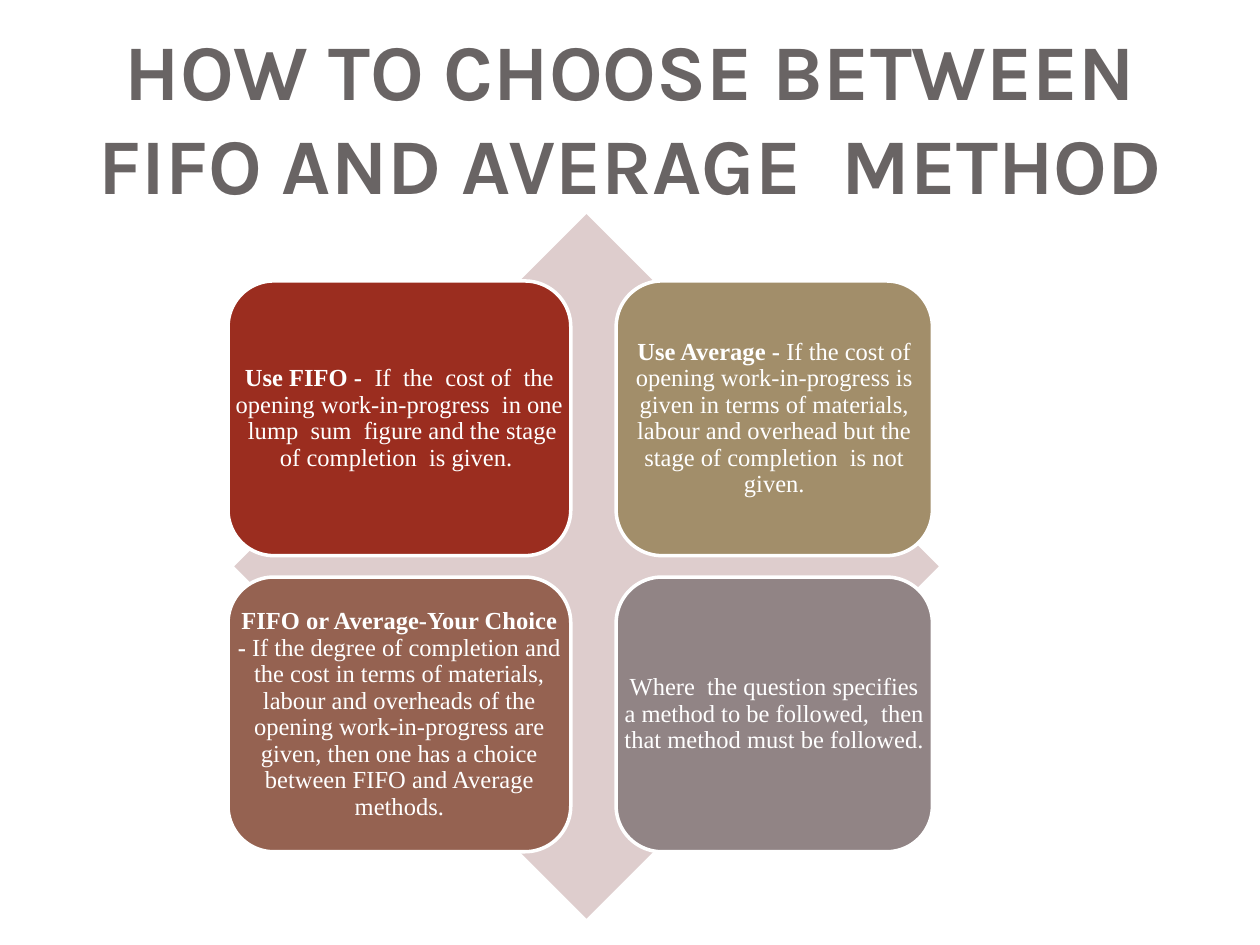
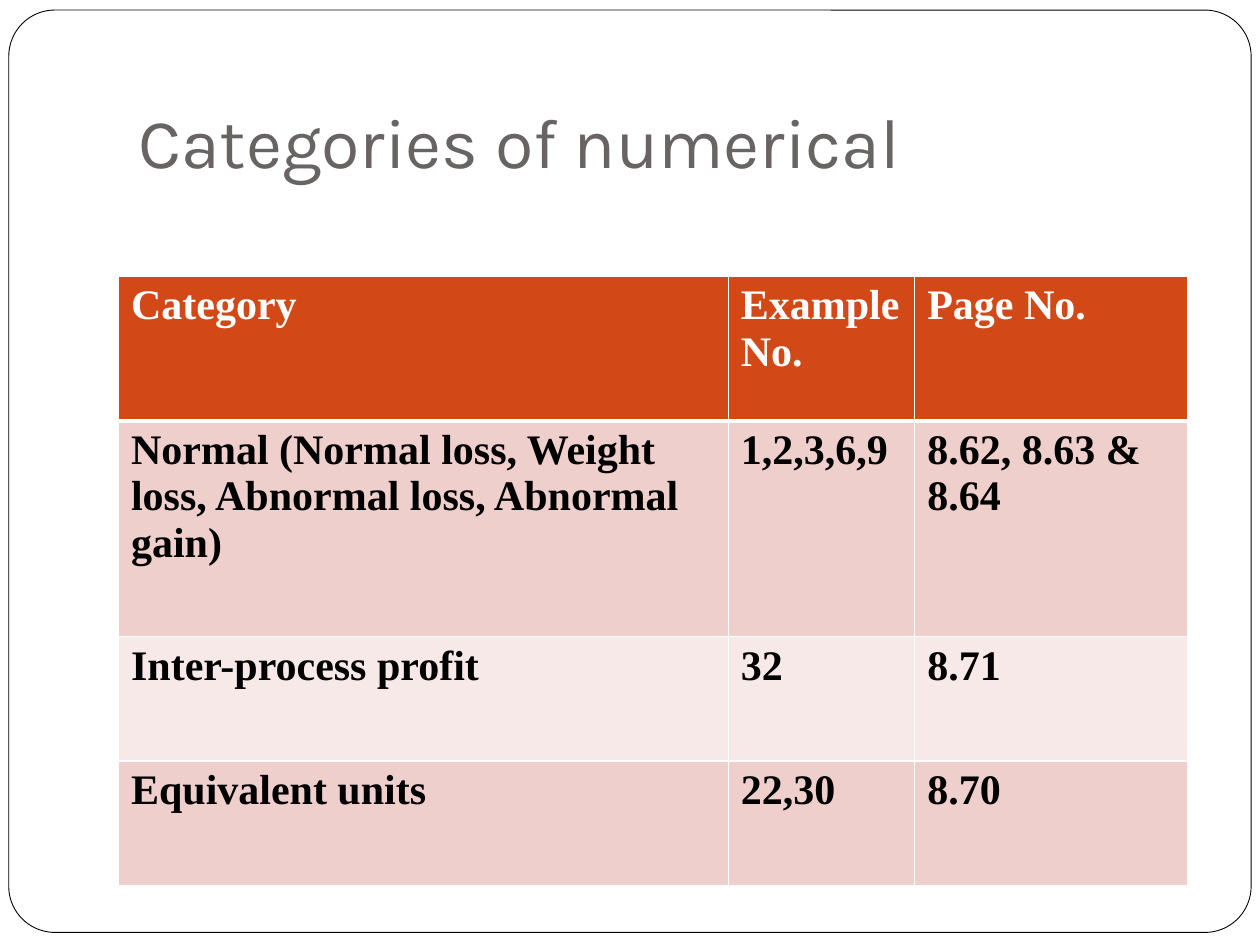
from itertools import product

from lxml import etree
from pptx import Presentation
from pptx.dml.color import RGBColor
from pptx.enum.shapes import MSO_SHAPE
from pptx.enum.text import MSO_ANCHOR, MSO_AUTO_SIZE, PP_ALIGN
from pptx.oxml.ns import qn
from pptx.util import Inches, Pt

DIAMOND, ROUNDED = MSO_SHAPE.DIAMOND, MSO_SHAPE.ROUNDED_RECTANGLE
LEFT, CENTER = PP_ALIGN.LEFT, PP_ALIGN.CENTER
MIDDLE, BOTTOM = MSO_ANCHOR.MIDDLE, MSO_ANCHOR.BOTTOM
NO_FIT = MSO_AUTO_SIZE.NONE

WHITE = RGBColor(0xFF, 0xFF, 0xFF)
BLACK = RGBColor(0x00, 0x00, 0x00)
TITLE_GREY = RGBColor(0x69, 0x64, 0x64)
DIAMOND_PINK = RGBColor(0xDE, 0xCD, 0xCD)
RED = RGBColor(0x9B, 0x2D, 0x1F)
SAND = RGBColor(0xA2, 0x8E, 0x6A)
BROWN = RGBColor(0x95, 0x62, 0x51)
MAUVE = RGBColor(0x91, 0x84, 0x85)
HEADER_ORANGE = RGBColor(0xD3, 0x48, 0x17)
BAND_DARK = RGBColor(0xEF, 0xCF, 0xCC)
BAND_LIGHT = RGBColor(0xF7, 0xE9, 0xE8)

TITLE_FONT, BODY_FONT = "Karla", "Times New Roman"
TITLE_ONLY = 5

CARD_COLUMNS = [(1.81, 2.72), (4.89, 2.51)]
CARD_ROWS = [(2.23, 2.18), (4.58, 2.18)]
CARDS = [
    (RED, "Use FIFO -  ",
     "If  the  cost of  the opening work-in-progress  in one  lump  sum  figure "
     "and the stage of completion  is given. "),
    (SAND, "Use Average -",
     " If the cost of opening work-in-progress is given in terms of materials, "
     "labour and overhead but the stage of completion  is not given."),
    (BROWN, "FIFO or Average-Your Choice -",
     " If the degree of completion and the cost in terms of materials, labour and "
     "overheads of the opening work-in-progress are given, then one has a choice "
     "between FIFO and Average methods."),
    (MAUVE, "",
     "Where  the question specifies a method to be followed,  then that method "
     "must be followed."),
]

COLUMN_WIDTHS = [4.84, 1.48, 2.17]
ROW_HEIGHTS = [1.15, 1.71, 0.99, 0.99]
CATEGORIES = [
    ("Category", "Example No.", "Page No."),
    ("Normal (Normal loss, Weight loss, Abnormal loss, Abnormal gain)",
     "1,2,3,6,9", "8.62, 8.63 & 8.64"),
    ("Inter-process profit", "32", "8.71"),
    ("Equivalent units", "22,30", "8.70"),
]


class Deck:
    """Holds the shared style and the current slide, and draws each kind of element."""

    def __init__(self):
        self.prs = Presentation()
        self.prs.slide_width, self.prs.slide_height = Inches(10), Inches(7.5)
        self.s = None

    def add_slide(self):
        self.s = self.prs.slides.add_slide(self.prs.slide_layouts[TITLE_ONLY])

    def run(self, p, text, size, color, bold=False, font=BODY_FONT):
        r = p.add_run()
        r.text = text
        r.font.name, r.font.size, r.font.bold = font, Pt(size), bold
        r.font.color.rgb = color

    def frame(self, tf, anchor, left, top, right, bottom):
        tf.word_wrap, tf.auto_size, tf.vertical_anchor = True, NO_FIT, anchor
        tf.margin_left, tf.margin_top = Inches(left), Inches(top)
        tf.margin_right, tf.margin_bottom = Inches(right), Inches(bottom)

    def title(self, text, box, size, align=LEFT, bold=False):
        sp = self.s.shapes.title
        sp.left, sp.top, sp.width, sp.height = map(Inches, box)
        self.frame(sp.text_frame, BOTTOM, 0.1, 0.05, 0.1, 0.1)
        p = sp.text_frame.paragraphs[0]
        p.alignment = align
        self.run(p, text, size, TITLE_GREY, bold, TITLE_FONT)

    def shape(self, kind, box, fill, line=None, width=0):
        sp = self.s.shapes.add_shape(kind, *map(Inches, box))
        sp.shadow.inherit = False
        sp.fill.solid()
        sp.fill.fore_color.rgb = fill
        if line is None:
            sp.line.fill.background()
        else:
            sp.line.color.rgb, sp.line.width = line, Pt(width)
        return sp

    def border(self):
        sp = self.shape(ROUNDED, (0.07, 0.08, 9.86, 7.32), WHITE, BLACK, 0.5)
        sp.adjustments[0] = 0.05
        self.s.shapes.title.element.addprevious(sp.element)

    def card(self, box, fill, lead, body):
        self.shape(ROUNDED, box, fill, WHITE, 2)
        tf = self.s.shapes.add_textbox(*map(Inches, box)).text_frame
        self.frame(tf, MIDDLE, 0.06, 0.06, 0.06, 0.06)
        p = tf.paragraphs[0]
        p.alignment, p.line_spacing = CENTER, 0.9
        if lead:
            self.run(p, lead, 14, WHITE, True)
        self.run(p, body, 14, WHITE)

    def cell_borders(self, cell, **widths):
        tc_pr = cell._tc.get_or_add_tcPr()
        for i, side in enumerate("LRTB"):
            ln = etree.Element(qn(f"a:ln{side}"), w=str(Pt(widths.get(side, 1))))
            fill = etree.SubElement(ln, qn("a:solidFill"))
            etree.SubElement(fill, qn("a:srgbClr"), val=str(WHITE))
            tc_pr.insert(i, ln)

    def table(self, rows, left, top, widths, heights):
        box = map(Inches, (left, top, sum(widths), sum(heights)))
        table = self.s.shapes.add_table(len(rows), len(widths), *box).table
        for column, width in zip(table.columns, widths):
            column.width = Inches(width)
        for row, height in zip(table.rows, heights):
            row.height = Inches(height)
        for i, j in product(range(len(rows)), range(len(widths))):
            cell = table.cell(i, j)
            cell.fill.solid()
            band = BAND_DARK if i % 2 else BAND_LIGHT
            cell.fill.fore_color.rgb = band if i else HEADER_ORANGE
            self.run(cell.text_frame.paragraphs[0], rows[i][j], 24,
                     BLACK if i else WHITE, True)
            self.cell_borders(cell, T=3 if i == 1 else 1, B=1 if i else 3)


def main():
    deck = Deck()

    deck.add_slide()
    deck.title("HOW TO CHOOSE BETWEEN FIFO AND AVERAGE  METHOD",
               (0.43, 0.52, 9.14, 1.25), 45, CENTER, True)
    deck.shape(DIAMOND, (1.86, 1.7, 5.59, 5.59), DIAMOND_PINK)
    for (row, column), card in zip(product(CARD_ROWS, CARD_COLUMNS), CARDS):
        (top, height), (left, width) = row, column
        deck.card((left, top, width, height), *card)

    deck.add_slide()
    deck.border()
    deck.title("Categories of numerical", (1, 0.3, 8.5, 1.25), 40)
    deck.table(CATEGORIES, 0.94, 2.19, COLUMN_WIDTHS, ROW_HEIGHTS)

    deck.prs.save("out.pptx")


if __name__ == "__main__":
    main()
